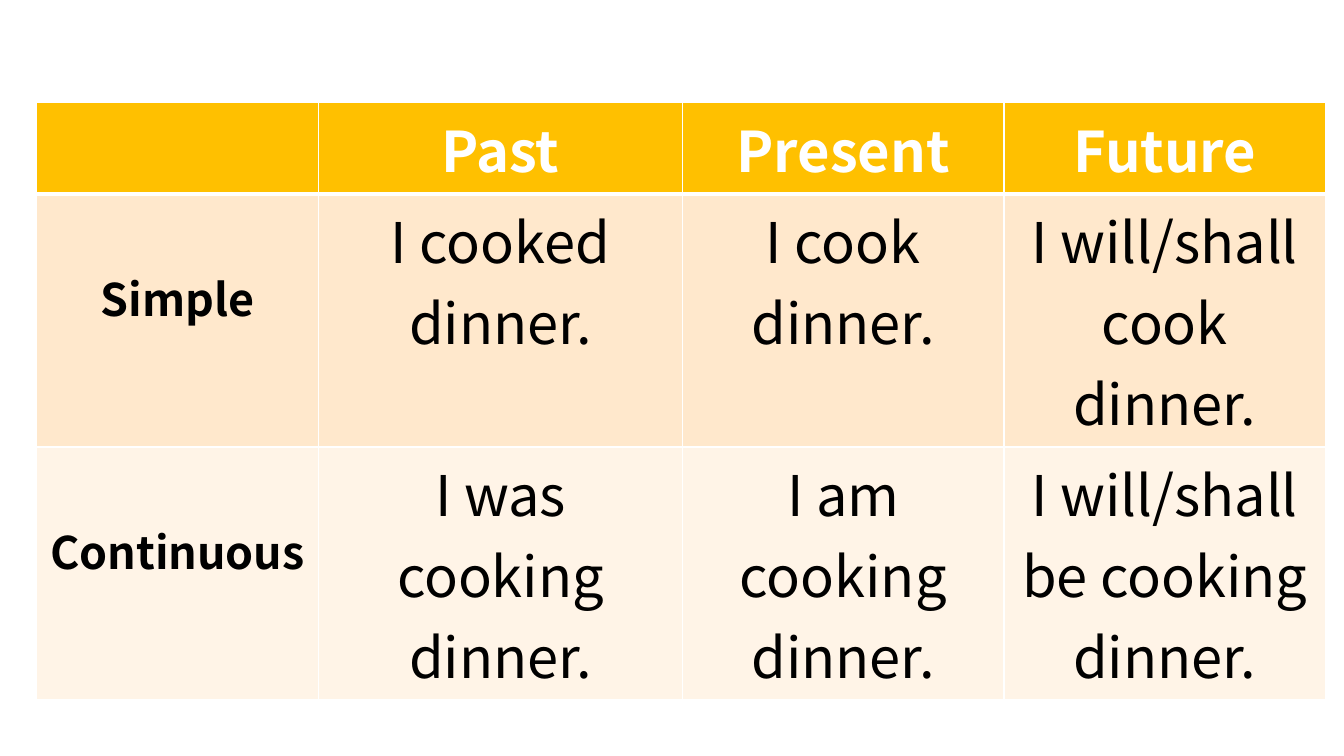
import dataclasses

import pptx
import pptx.dml.color
import pptx.enum.text
import pptx.oxml
import pptx.oxml.ns
import pptx.util

Pt = pptx.util.Pt
RGB = pptx.dml.color.RGBColor.from_string


@dataclasses.dataclass(frozen=True)
class Theme:
    font: str = "Noto Sans CJK JP"
    body_size: int = 40
    label_size: int = 32
    header_text: str = "FFFFFF"
    text: str = "000000"
    border: str = "FFFFFF"
    header_fill: str = "FFC000"
    row_fills: tuple = ("FFE8CC", "FFF4E7")


THEME = Theme()

TENSES = [
    ["", "Past", "Present", "Future"],
    ["Simple", "I cooked dinner.", "I cook dinner.", "I will/shall cook dinner."],
    ["Continuous", "I was cooking dinner.", "I am cooking dinner.",
     "I will/shall be cooking dinner."],
]
COL_WIDTHS = [201.6, 259.9, 229.7, 229.7]
ROW_HEIGHTS = [62, 166, 166]
LABEL_TOP = 50  # drops the row label to the second line of its cell


def set_borders(cell, top, bottom):
    """Draw the four cell borders; widths in points."""
    tcPr = cell._tc.get_or_add_tcPr()
    for side, width in (("L", 1), ("R", 1), ("T", top), ("B", bottom)):
        tcPr.append(pptx.oxml.parse_xml(
            f'<a:ln{side} {pptx.oxml.ns.nsdecls("a")} w="{Pt(width)}">'
            f'<a:solidFill><a:srgbClr val="{THEME.border}"/></a:solidFill>'
            f'</a:ln{side}>'))


def set_fill(cell, color):
    cell.fill.solid()
    cell.fill.fore_color.rgb = RGB(color)


def write(cell, text, size, color, bold):
    p = cell.text_frame.paragraphs[0]
    p.alignment = pptx.enum.text.PP_ALIGN.CENTER
    r = p.add_run()
    r.text = text
    r.font.name = THEME.font
    r.font.size = Pt(size)
    r.font.bold = bold
    r.font.color.rgb = RGB(color)


def add_tense_table(s):
    frame = s.shapes.add_table(len(TENSES), len(COL_WIDTHS), Pt(26), Pt(73.5),
                               Pt(sum(COL_WIDTHS)), Pt(sum(ROW_HEIGHTS)))
    table = frame.table
    for col, width in zip(table.columns, COL_WIDTHS):
        col.width = Pt(width)
    for row, height in zip(table.rows, ROW_HEIGHTS):
        row.height = Pt(height)

    for i, texts in enumerate(TENSES):
        header = i == 0
        for j, text in enumerate(texts):
            cell = table.cell(i, j)
            label = j == 0 and not header
            # The line under the header is heavier than the rest
            set_borders(cell, top=3 if i == 1 else 1, bottom=3 if header else 1)
            set_fill(cell, THEME.header_fill if header else THEME.row_fills[i - 1])
            if label:
                cell.margin_top = Pt(LABEL_TOP)
            if text:
                write(cell, text,
                      size=THEME.label_size if label else THEME.body_size,
                      color=THEME.header_text if header else THEME.text,
                      bold=header or label)


def main():
    prs = pptx.Presentation()
    prs.slide_width, prs.slide_height = Pt(960), Pt(540)
    # Blank layout: the slide has no title
    s = prs.slides.add_slide(prs.slide_layouts.get_by_name("Blank"))
    add_tense_table(s)
    prs.save("out.pptx")


if __name__ == "__main__":
    main()
